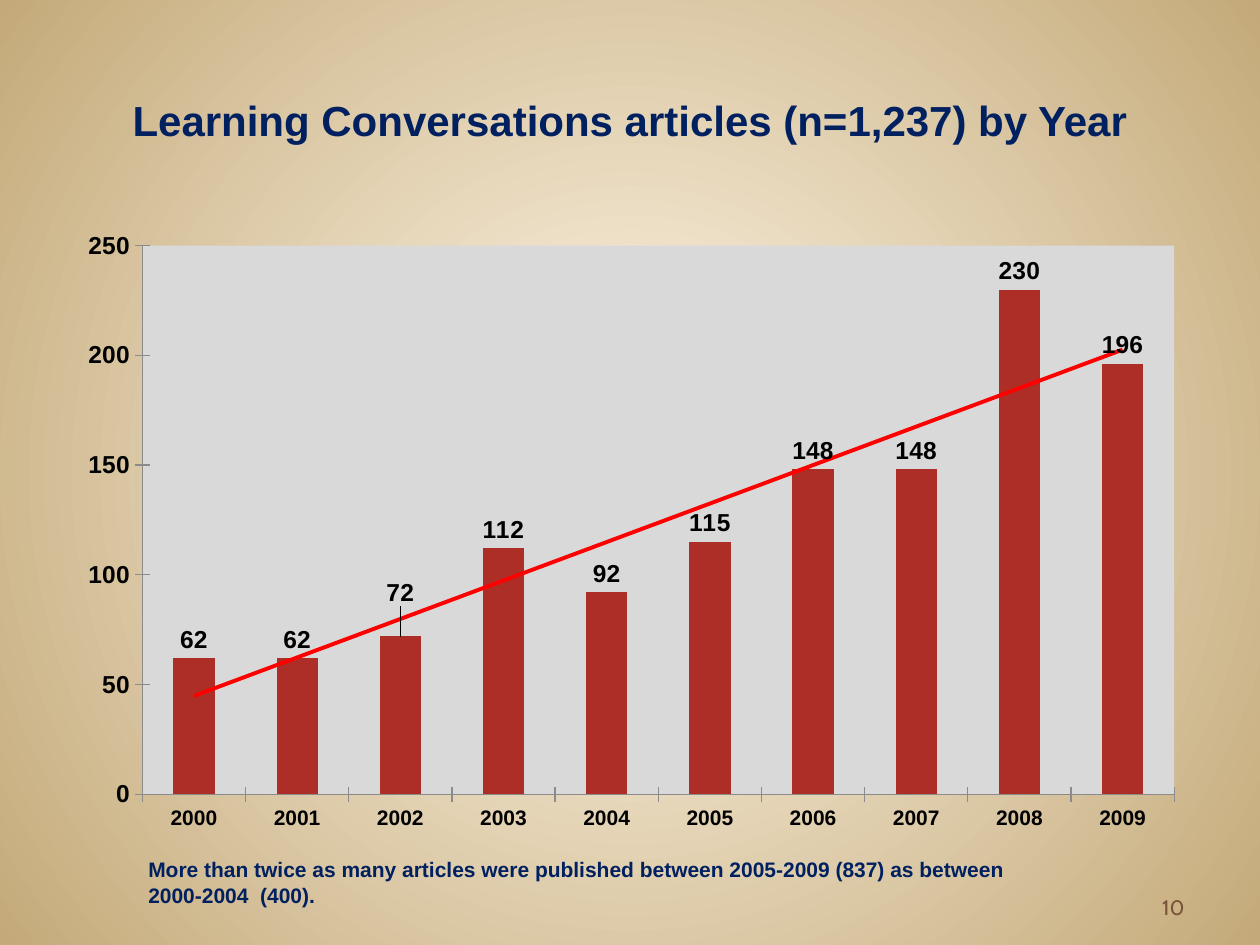
from lxml.etree import SubElement
from pptx import Presentation
from pptx.chart.data import CategoryChartData
from pptx.dml.color import RGBColor
from pptx.enum.chart import XL_CHART_TYPE, XL_LABEL_POSITION, XL_TICK_MARK
from pptx.enum.text import MSO_ANCHOR, PP_ALIGN
from pptx.oxml import parse_xml
from pptx.oxml.ns import nsdecls, qn
from pptx.util import Cm, Pt

COLORS = {
    "navy": "002060", "brown": "795339", "black": "000000", "axis": "8B8B8B",
    "bar": "AD2E27", "trend": "FF0000", "plot": "D9D9D9",
    "glow": "FFF7E8", "edge": "C4AA7A",
}
ARTICLES = {
    "2000": 62, "2001": 62, "2002": 72, "2003": 112, "2004": 92,
    "2005": 115, "2006": 148, "2007": 148, "2008": 230, "2009": 196,
}


def rgb(name):
    return RGBColor.from_string(COLORS[name])


def set_font(font, size, name="Arial", color="black", bold=True):
    font.size, font.name, font.bold = Pt(size), name, bold
    font.color.rgb = rgb(color)


def add_text(s, box, text, align=PP_ALIGN.LEFT, anchor=MSO_ANCHOR.TOP,
             bottom=0.13, **font):
    tf = s.shapes.add_textbox(*map(Cm, box)).text_frame
    tf.word_wrap = True
    tf.vertical_anchor = anchor
    tf.margin_bottom = Cm(bottom)
    p = tf.paragraphs[0]
    p.alignment = align
    r = p.add_run()
    r.text = text
    set_font(r.font, **font)


def paint_background(s):
    """Radial gradient spreading from the middle of the slide."""
    fill = s.background.fill
    fill.gradient()
    for stop, name, position in zip(fill.gradient_stops, ("glow", "edge"), (0, 1)):
        stop.color.rgb = rgb(name)
        stop.position = position
    grad = s._element.find(".//" + qn("a:gradFill"))
    grad.remove(grad.find(qn("a:lin")))
    radial = SubElement(grad, qn("a:path"), path="circle")
    SubElement(radial, qn("a:fillToRect"), l="50000", t="50000", r="50000", b="50000")


def manual_layout(inner=False, **values):
    """Layout element; inner places the plot without its axis labels."""
    parts = ['<c:layoutTarget val="inner"/><c:xMode val="edge"/><c:yMode val="edge"/>'
             if inner else ""]
    parts += [f'<c:{key} val="{value}"/>' for key, value in values.items()]
    return parse_xml(f'<c:layout {nsdecls("c")}><c:manualLayout>{"".join(parts)}'
                     '</c:manualLayout></c:layout>')


def style_axis(axis, size):
    axis.has_major_gridlines = False
    axis.major_tick_mark = XL_TICK_MARK.CROSS
    axis.minor_tick_mark = XL_TICK_MARK.NONE
    axis.format.line.color.rgb = rgb("axis")
    set_font(axis.tick_labels.font, size)


def fill_plot(chart):
    area = chart._chartSpace.chart.plotArea
    for old in area.findall(qn("c:layout")):
        area.remove(old)
    area.insert(0, manual_layout(inner=True, x=0.07, y=0.04, w=0.91, h=0.88))
    area.append(parse_xml(
        f'<c:spPr {nsdecls("c", "a")}><a:solidFill><a:srgbClr val="{COLORS["plot"]}"/>'
        '</a:solidFill></c:spPr>'))


def add_trend(series):
    series._element.find(qn("c:cat")).addprevious(parse_xml(
        f'<c:trendline {nsdecls("c", "a")}><c:spPr><a:ln w="{Pt(2.25)}"><a:solidFill>'
        f'<a:srgbClr val="{COLORS["trend"]}"/></a:solidFill></a:ln></c:spPr>'
        '<c:trendlineType val="linear"/><c:dispRSqr val="0"/><c:dispEq val="0"/>'
        '</c:trendline>'))


def label_bars(series):
    labels = series.data_labels
    labels.show_value = True
    labels.position = XL_LABEL_POSITION.OUTSIDE_END
    set_font(labels.font, 14)
    # The 2002 label is lifted clear of the trend line.
    lifted = series.points[2].data_label
    lifted.position = XL_LABEL_POSITION.OUTSIDE_END
    set_font(lifted.font, 14)
    idx = labels._element.find(qn("c:dLbl")).find(qn("c:idx"))
    idx.addnext(manual_layout(x=0, y=-0.04))


def add_year_chart(s, box):
    data = CategoryChartData()
    data.categories = list(ARTICLES)
    data.add_series("Series 1", list(ARTICLES.values()))
    chart = s.shapes.add_chart(
        XL_CHART_TYPE.COLUMN_CLUSTERED, *map(Cm, box), data).chart
    chart.has_legend = chart.has_title = False
    set_font(chart.font, 18, name="Cabin", bold=False)
    style_axis(chart.category_axis, 12)
    axis = chart.value_axis
    style_axis(axis, 14)
    axis.minimum_scale, axis.maximum_scale, axis.major_unit = 0, 250, 50
    plot = chart.plots[0]
    plot.gap_width = 150
    plot.vary_by_categories = False
    series = plot.series[0]
    series.format.fill.solid()
    series.format.fill.fore_color.rgb = rgb("bar")
    label_bars(series)
    add_trend(series)
    fill_plot(chart)


def main():
    prs = Presentation()
    prs.slide_width, prs.slide_height = Cm(25.4), Cm(19.05)
    s = prs.slides.add_slide(prs.slide_layouts[6])
    paint_background(s)
    add_text(s, (1.27, 0.84, 22.86, 3.18),
             "Learning Conversations articles (n=1,237) by Year",
             align=PP_ALIGN.CENTER, anchor=MSO_ANCHOR.BOTTOM, bottom=1.1,
             size=24, color="navy")
    add_year_chart(s, (1.27, 4.45, 22.86, 12.57))
    add_text(s, (18.21, 17.35, 5.92, 1.32), "10", align=PP_ALIGN.RIGHT,
             anchor=MSO_ANCHOR.BOTTOM, size=12, name="Cabin", color="brown", bold=False)
    add_text(s, (2.74, 17.15, 18.85, 1.27),
             "More than twice as many articles were published between 2005-2009 (837) "
             "as between 2000-2004  (400).", size=12, color="navy")
    prs.save("out.pptx")


if __name__ == "__main__":
    main()
